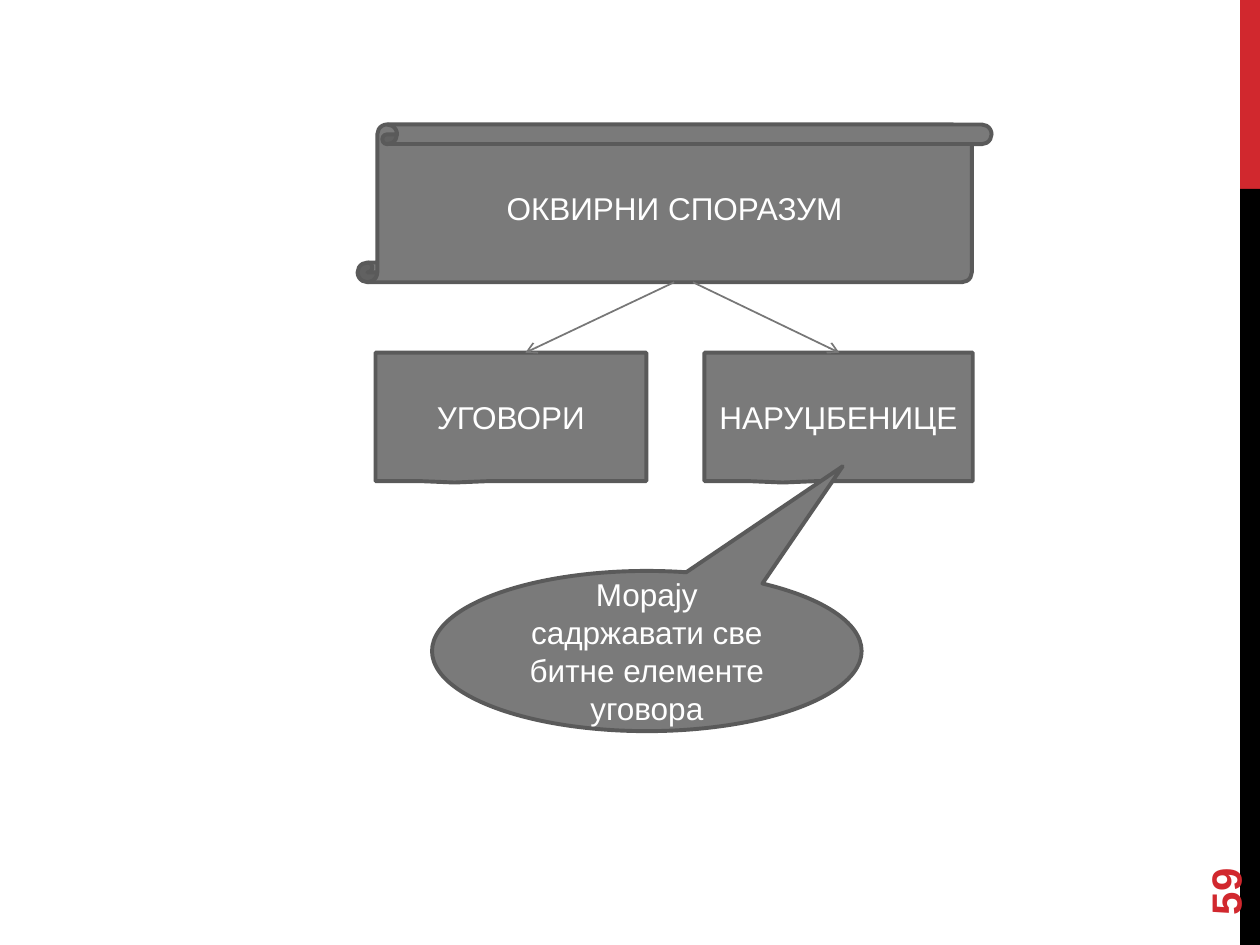
from dataclasses import dataclass

from lxml.etree import SubElement
from pptx import Presentation
from pptx.dml.color import RGBColor
from pptx.enum.shapes import MSO_CONNECTOR, MSO_SHAPE
from pptx.enum.text import MSO_ANCHOR, PP_ALIGN
from pptx.oxml.ns import qn
from pptx.util import Cm, Pt


@dataclass(frozen=True)
class Theme:
    font: str = "Arial"
    red: RGBColor = RGBColor(0xD1, 0x28, 0x2E)
    black: RGBColor = RGBColor(0, 0, 0)
    white: RGBColor = RGBColor(0xFF, 0xFF, 0xFF)
    box: RGBColor = RGBColor(0x7A, 0x7A, 0x7A)
    outline: RGBColor = RGBColor(0x5A, 0x5A, 0x5A)
    arrow: RGBColor = RGBColor(0x77, 0x77, 0x77)
    body_size: Pt = Pt(18)
    number_size: Pt = Pt(24)
    outline_width: Pt = Pt(2.25)
    arrow_width: Pt = Pt(1)


theme = Theme()


def add_filled_shape(kind, left, top, width, height, color):
    shape = slide.shapes.add_shape(kind, Cm(left), Cm(top), Cm(width), Cm(height))
    shape.shadow.inherit = False
    shape.fill.solid()
    shape.fill.fore_color.rgb = color
    shape.line.fill.background()
    return shape


def write_text(shape, text, size, color, align, bold=False):
    frame = shape.text_frame
    frame.text = text
    frame.word_wrap = True
    frame.vertical_anchor = MSO_ANCHOR.MIDDLE
    paragraph = frame.paragraphs[0]
    paragraph.alignment = align
    font = paragraph.runs[0].font
    font.name, font.size, font.bold = theme.font, size, bold
    font.color.rgb = color


presentation = Presentation()
presentation.slide_width, presentation.slide_height = Cm(25.4), Cm(19.05)
slide = presentation.slides.add_slide(presentation.slide_layouts[6])

# Side stripe and slide number
for top, height, color in [(0, 3.81, theme.red), (3.81, 15.24, theme.black)]:
    add_filled_shape(MSO_SHAPE.RECTANGLE, 25, top, 0.4, height, color)

slide_number = slide.shapes.add_textbox(Cm(22.86), Cm(16.36), Cm(3.66), Cm(1.02))
slide_number.rotation = 270
write_text(slide_number, "59", theme.number_size, theme.red, PP_ALIGN.LEFT, bold=True)

# Agreement, its two outcomes and the remark
row_top, row_height = 7.11, 2.59
callout_tip = (-0.208, 0.511)
boxes = [
    (MSO_SHAPE.VERTICAL_SCROLL, 7.21, 2.51, 12.78, 3.18, (), "ОКВИРНИ СПОРАЗУМ"),
    (MSO_SHAPE.RECTANGULAR_CALLOUT, 7.57, row_top, 5.46, row_height, callout_tip, "УГОВОРИ"),
    (MSO_SHAPE.RECTANGULAR_CALLOUT, 14.2, row_top, 5.41, row_height, callout_tip, "НАРУЏБЕНИЦЕ"),
    (MSO_SHAPE.OVAL_CALLOUT, 8.71, 11.51, 8.66, 3.23, (0.456, -1.153),
     "Морају садржавати све битне елементе уговора"),
]
for kind, left, top, width, height, adjustments, text in boxes:
    shape = add_filled_shape(kind, left, top, width, height, theme.box)
    shape.line.color.rgb = theme.outline
    shape.line.width = theme.outline_width
    for index, value in enumerate(adjustments):
        shape.adjustments[index] = value
    write_text(shape, text, theme.body_size, theme.white, PP_ALIGN.CENTER)

# Arrows from the agreement to its outcomes
for start_x, end_x in [(13.59, 10.59), (13.97, 16.92)]:
    arrow = slide.shapes.add_connector(
        MSO_CONNECTOR.STRAIGHT, Cm(start_x), Cm(5.69), Cm(end_x), Cm(row_top))
    arrow.line.color.rgb = theme.arrow
    arrow.line.width = theme.arrow_width
    SubElement(arrow.line._get_or_add_ln(), qn("a:tailEnd"), type="arrow")
    SubElement(arrow._element.spPr, qn("a:effectLst"))

presentation.save("out.pptx")
